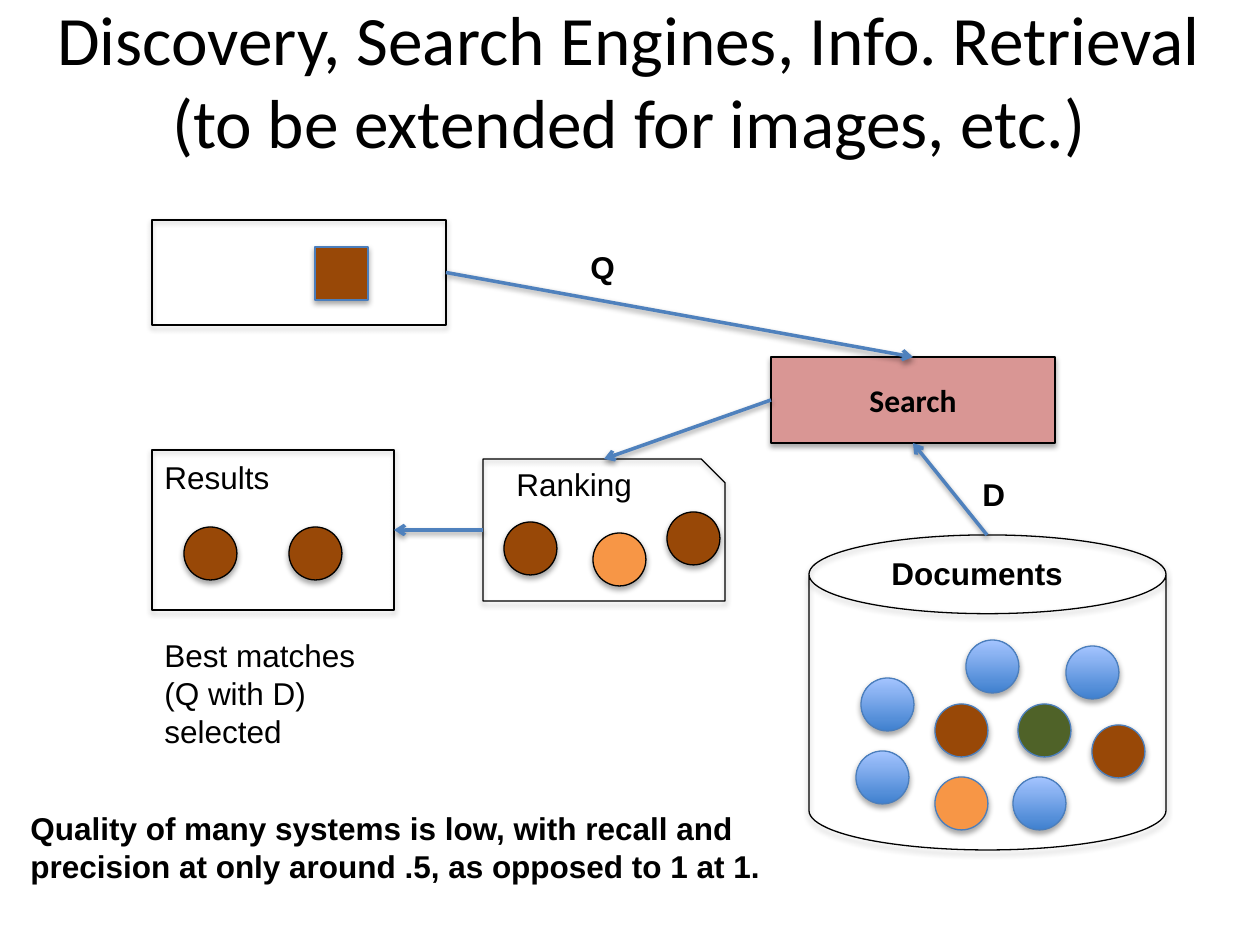
"""Build a slide that shows how a query, documents, search and ranking give results."""
from dataclasses import dataclass

from pptx import Presentation
from pptx import util as u
from pptx.dml.color import RGBColor
from pptx.enum import shapes, text
from pptx.oxml.ns import qn
from lxml import etree

SCALE = 914400 / 126
DOT = 53
OVAL = shapes.MSO_SHAPE.OVAL
RECTANGLE = shapes.MSO_SHAPE.RECTANGLE


@dataclass(frozen=True)
class Theme:
    """Colours, fonts and sizes of the slide."""
    black: str = "000000"
    brown: str = "984807"
    orange: str = "F79646"
    green: str = "4F6228"
    pink: str = "D99694"
    edge: str = "4B7EBC"
    arrow: str = "4F81BD"
    blue: tuple = ("3F80CE", "A4C4FF")
    heading: str = "Calibri"
    label: str = "Arial"
    title_size: float = 39.6
    label_size: float = 18
    outline: float = 0.75
    arrow_width: float = 2


THEME = Theme()


def px(length):
    """Turn pixels into EMU."""
    return u.Emu(round(length * SCALE))


def color(value):
    """Turn a hex string into a colour."""
    return RGBColor.from_string(value)


def add_span(para, words, font=THEME.label, size=THEME.label_size, bold=False):
    """Add one formatted run to a paragraph."""
    span = para.add_run()
    span.text = words
    span.font.name = font
    span.font.size = u.Pt(size)
    span.font.bold = bold
    span.font.color.rgb = color(THEME.black)


def set_title(page, lines):
    """Place the title and fill it line by line."""
    title = page.shapes.title
    title.left, title.top, title.width, title.height = map(px, (18, 0, 1222, 158))
    frame = title.text_frame
    frame.vertical_anchor = text.MSO_ANCHOR.MIDDLE
    para = frame.paragraphs[0]
    para.alignment = text.PP_ALIGN.CENTER
    for index, line in enumerate(lines):
        if index:
            para.add_line_break()
        add_span(para, line, THEME.heading, THEME.title_size)


def add_label(parent, place, words, bold=False, wrap=False):
    """Add a text box that grows with its text."""
    box = parent.shapes.add_textbox(*map(px, place))
    frame = box.text_frame
    frame.word_wrap = wrap
    frame.auto_size = text.MSO_AUTO_SIZE.SHAPE_TO_FIT_TEXT
    add_span(frame.paragraphs[0], words, bold=bold)


def add_figure(parent, kind, place, fill=None, line=THEME.black):
    """Add a shape with the theme shadow and a plain, graded or empty fill."""
    figure = parent.shapes.add_shape(kind, *map(px, place))
    if fill is None:
        figure.fill.background()
    elif isinstance(fill, tuple):
        figure.fill.gradient()
        figure.fill.gradient_angle = 90
        for stop, value in zip(figure.fill.gradient_stops, fill):
            stop.color.rgb = color(value)
    else:
        figure.fill.solid()
        figure.fill.fore_color.rgb = color(fill)
    figure.line.color.rgb = color(line)
    figure.line.width = u.Pt(THEME.outline)
    return figure


def add_dots(parent, dots, line=THEME.black):
    """Add equal circles, each given as left, top and fill."""
    for left, top, fill in dots:
        add_figure(parent, OVAL, (left, top, DOT, DOT), fill, line)


def add_arrow(page, start, end, begin=None, finish=None):
    """Add an arrow, joined to a (shape, side) pair at either end if given."""
    arrow = page.shapes.add_connector(
        shapes.MSO_CONNECTOR.STRAIGHT, *map(px, (*start, *end)))
    if begin:
        arrow.begin_connect(*begin)
    if finish:
        arrow.end_connect(*finish)
    arrow.line.color.rgb = color(THEME.arrow)
    arrow.line.width = u.Pt(THEME.arrow_width)
    etree.SubElement(arrow.line._get_or_add_ln(), qn("a:tailEnd"), type="arrow")


def add_documents(page):
    """Add the document store with its mixed contents."""
    add_dots(page, [
        (1018, 704, THEME.green), (1092, 725, THEME.brown),
        (1013, 777, THEME.blue), (861, 678, THEME.blue),
        (856, 751, THEME.blue), (935, 777, THEME.orange),
        (1066, 646, THEME.blue), (966, 640, THEME.blue),
        (935, 704, THEME.brown)], THEME.edge)
    add_label(page, (879, 548, 199, 50), "Documents", bold=True)
    add_figure(page, shapes.MSO_SHAPE.CAN, (809, 535, 357, 315))


def add_search(page):
    """Add the search box and return it."""
    search = add_figure(page, RECTANGLE, (771, 357, 284, 86), THEME.pink)
    search.text_frame.vertical_anchor = text.MSO_ANCHOR.MIDDLE
    para = search.text_frame.paragraphs[0]
    para.alignment = text.PP_ALIGN.CENTER
    add_span(para, "Search", THEME.heading, bold=True)
    return search


def add_ranking(page):
    """Add the group of ranked candidates."""
    group = page.shapes.add_group_shape()
    add_figure(group, shapes.MSO_SHAPE.SNIP_1_RECTANGLE, (483, 459, 242, 142))
    add_dots(group, [(667, 512, THEME.brown), (593, 533, THEME.orange),
                     (504, 522, THEME.brown)])
    add_label(group, (504, 459, 142, 50), "Ranking")


def add_query(page):
    """Add the query group and return its frame."""
    group = page.shapes.add_group_shape()
    query = add_figure(group, RECTANGLE, (152, 220, 294, 105))
    add_figure(group, RECTANGLE, (315, 247, DOT, DOT), THEME.brown, THEME.edge)
    return query


def add_results(page):
    """Add the results group and return its frame."""
    group = page.shapes.add_group_shape()
    add_dots(group, [(289, 527, THEME.brown), (184, 527, THEME.brown)])
    results = add_figure(group, RECTANGLE, (152, 450, 242, 160))
    add_label(group, (152, 452, 131, 50), "Results")
    return results


def main():
    """Build and save the slide."""
    deck = Presentation()
    deck.slide_width, deck.slide_height = px(1260), px(945)
    page = deck.slides.add_slide(deck.slide_layouts[5])
    set_title(page, ["Discovery, Search Engines, Info. Retrieval",
                     "(to be extended for images, etc.)"])
    add_documents(page)
    search = add_search(page)
    add_ranking(page)
    query = add_query(page)
    results = add_results(page)
    add_arrow(page, (446, 273), (913, 357), (query, 3), (search, 0))
    add_arrow(page, (987, 535), (913, 443), finish=(search, 2))
    add_arrow(page, (771, 400), (604, 459), begin=(search, 1))
    add_arrow(page, (483, 530), (394, 530), finish=(results, 3))
    add_label(page, (578, 242, 50, 50), "Q", bold=True)
    add_label(page, (970, 469, 48, 50), "D", bold=True)
    add_label(page, (152, 630, 242, 127), "Best matches (Q with D) selected", wrap=True)
    add_label(page, (18, 803, 765, 89),
              "Quality of many systems is low, with recall and precision "
              "at only around .5, as opposed to 1 at 1.", bold=True, wrap=True)
    deck.save("out.pptx")


if __name__ == "__main__":
    main()
